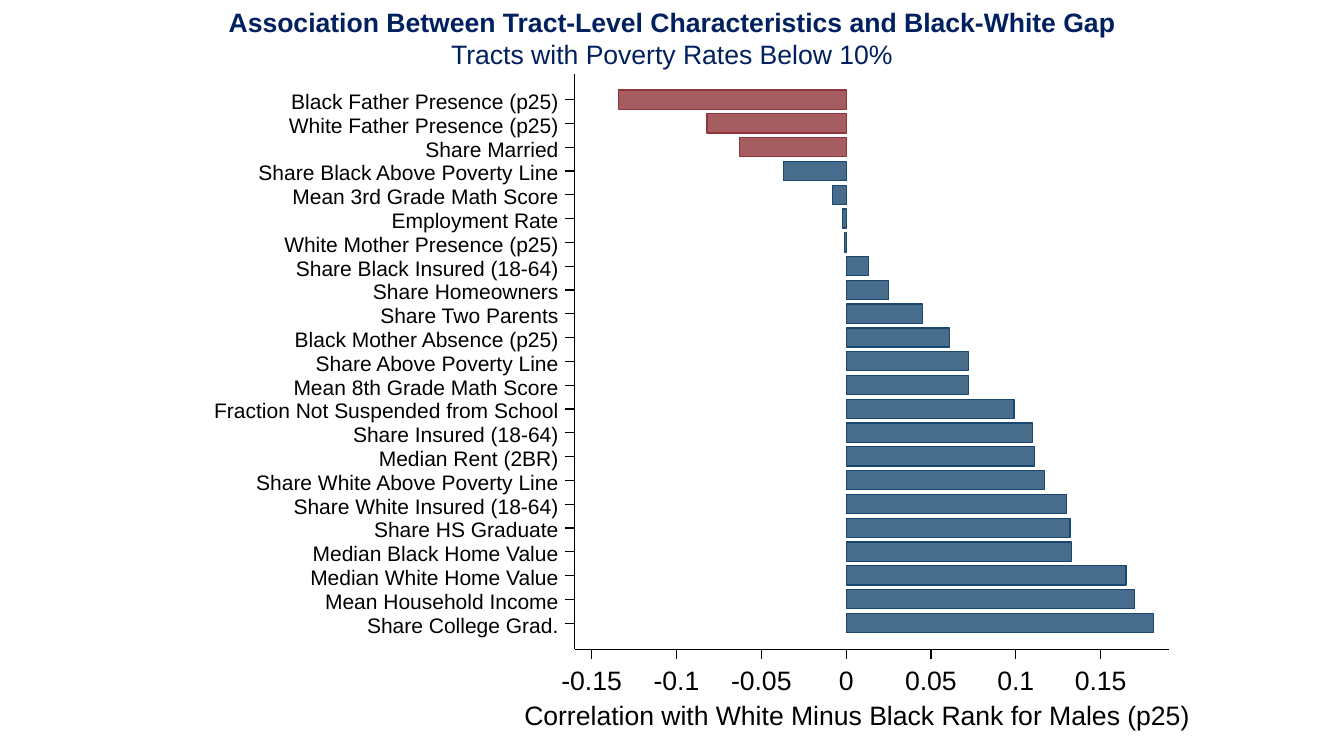
import pptx
import pptx.chart.data
import pptx.enum.chart
import pptx.enum.shapes
import pptx.enum.text
import pptx.oxml
import pptx.util
from pptx.dml.color import RGBColor
from pptx.oxml.ns import nsdecls
from pptx.util import Inches

COLORS = {
    "title": "002060",
    "text": "000000",
    "bar": "486C8C",
    "bar_edge": "1A476F",
    "family_bar": "A65D62",
    "family_bar_edge": "90353B",
}
FONT = "Arial"
LINE_WIDTH = pptx.util.Pt(0.88)

# Top to bottom
CORRELATIONS = [
    ("Black Father Presence (p25)", -0.134),
    ("White Father Presence (p25)", -0.082),
    ("Share Married", -0.063),
    ("Share Black Above Poverty Line", -0.037),
    ("Mean 3rd Grade Math Score", -0.008),
    ("Employment Rate", -0.002),
    ("White Mother Presence (p25)", -0.001),
    ("Share Black Insured (18-64)", 0.013),
    ("Share Homeowners", 0.025),
    ("Share Two Parents", 0.045),
    ("Black Mother Absence (p25)", 0.061),
    ("Share Above Poverty Line", 0.072),
    ("Mean 8th Grade Math Score", 0.072),
    ("Fraction Not Suspended from School", 0.099),
    ("Share Insured (18-64)", 0.11),
    ("Median Rent (2BR)", 0.111),
    ("Share White Above Poverty Line", 0.117),
    ("Share White Insured (18-64)", 0.13),
    ("Share HS Graduate", 0.132),
    ("Median Black Home Value", 0.133),
    ("Median White Home Value", 0.165),
    ("Mean Household Income", 0.17),
    ("Share College Grad.", 0.181),
]
FAMILY_BARS = 3
TICK_VALUES = [-0.15, -0.1, -0.05, 0, 0.05, 0.1, 0.15]

SCALE_MIN, SCALE_MAX = -0.16, 0.19
AXIS_LEFT, AXIS_RIGHT, AXIS_TOP, AXIS_BOTTOM = 5.7, 11.59, 0.73, 6.44
BARS_TOP, BARS_HEIGHT = 0.87, 5.43
ROW_HEIGHT = BARS_HEIGHT / len(CORRELATIONS)
TICK_LENGTH = 0.1


def color(name):
    return RGBColor.from_string(COLORS[name])


def style_font(font, size, name="text", bold=False):
    font.name = FONT
    font.size = pptx.util.Pt(size)
    font.bold = bold
    font.color.rgb = color(name)


def clear_margins(frame):
    frame.margin_left = frame.margin_right = 0
    frame.margin_top = frame.margin_bottom = 0


def add_title(page):
    title = page.shapes.title
    title.left, title.top = Inches(0), Inches(0.06)
    title.width, title.height = Inches(13.33), Inches(0.64)
    frame = title.text_frame
    clear_margins(frame)
    frame.vertical_anchor = pptx.enum.text.MSO_ANCHOR.TOP
    frame.auto_size = pptx.enum.text.MSO_AUTO_SIZE.NONE
    frame.text = (
        "Association Between Tract-Level Characteristics and Black-White Gap\n"
        "Tracts with Poverty Rates Below 10%"
    )
    for para, bold in zip(frame.paragraphs, (True, False)):
        para.alignment = pptx.enum.text.PP_ALIGN.CENTER
        para.line_spacing = 1.0
        para.space_before = pptx.util.Pt(0)
        style_font(para.font, 19, "title", bold)


def add_label(page, text, left, top, width, height, size, align):
    box = page.shapes.add_textbox(
        Inches(left), Inches(top), Inches(width), Inches(height)
    )
    frame = box.text_frame
    clear_margins(frame)
    frame.word_wrap = True
    para = frame.paragraphs[0]
    para.text = text
    para.alignment = align
    style_font(para.font, size)


def add_line(page, x1, y1, x2, y2):
    line = page.shapes.add_connector(
        pptx.enum.shapes.MSO_CONNECTOR.STRAIGHT,
        Inches(x1), Inches(y1), Inches(x2), Inches(y2),
    )
    line.line.color.rgb = color("text")
    line.line.width = LINE_WIDTH
    line._element.spPr.append(
        pptx.oxml.parse_xml(f"<a:effectLst {nsdecls('a')}/>")
    )


def color_bar(target, name):
    target.fill.solid()
    target.fill.fore_color.rgb = color(name)
    target.line.color.rgb = color(name + "_edge")
    target.line.width = LINE_WIDTH


def fill_frame_with_plot(chart):
    """Make the inner plot area cover the whole chart frame."""
    plot_area = chart._chartSpace.chart.plotArea
    for layout in plot_area.findall(pptx.oxml.ns.qn("c:layout")):
        plot_area.remove(layout)
    plot_area.insert(0, pptx.oxml.parse_xml(
        f"<c:layout {nsdecls('c')}><c:manualLayout>"
        '<c:layoutTarget val="inner"/>'
        '<c:xMode val="edge"/><c:yMode val="edge"/>'
        '<c:x val="0"/><c:y val="0"/><c:w val="1"/><c:h val="1"/>'
        "</c:manualLayout></c:layout>"
    ))


def add_bars(page):
    data = pptx.chart.data.CategoryChartData()
    bottom_up = CORRELATIONS[::-1]
    data.categories = [name for name, value in bottom_up]
    data.add_series("Correlation", [value for name, value in bottom_up])
    chart = page.shapes.add_chart(
        pptx.enum.chart.XL_CHART_TYPE.BAR_CLUSTERED,
        Inches(AXIS_LEFT), Inches(BARS_TOP),
        Inches(AXIS_RIGHT - AXIS_LEFT), Inches(BARS_HEIGHT), data,
    ).chart
    chart.has_legend = False
    chart.has_title = False
    style_font(chart.font, 15)
    fill_frame_with_plot(chart)
    chart.value_axis.minimum_scale = SCALE_MIN
    chart.value_axis.maximum_scale = SCALE_MAX
    chart.value_axis.has_major_gridlines = False
    chart.value_axis.visible = False
    chart.category_axis.visible = False
    plot = chart.plots[0]
    plot.gap_width = 24
    plot.vary_by_categories = False
    series = plot.series[0]
    series.invert_if_negative = False
    color_bar(series.format, "bar")
    for offset in range(1, FAMILY_BARS + 1):
        point = series.points[len(CORRELATIONS) - offset]
        color_bar(point.format, "family_bar")


def add_characteristic_axis(page):
    add_line(page, AXIS_LEFT, AXIS_BOTTOM, AXIS_LEFT, AXIS_TOP)
    for row, (name, value) in enumerate(CORRELATIONS):
        middle = BARS_TOP + (row + 0.5) * ROW_HEIGHT
        add_line(page, AXIS_LEFT, middle, AXIS_LEFT - TICK_LENGTH, middle)
        add_label(page, name, 1.54, middle - 0.11, 4, 0.28, 15,
                  pptx.enum.text.PP_ALIGN.RIGHT)


def add_correlation_axis(page):
    center = pptx.enum.text.PP_ALIGN.CENTER
    add_line(page, AXIS_LEFT, AXIS_BOTTOM, AXIS_RIGHT, AXIS_BOTTOM)
    inches_per_unit = (AXIS_RIGHT - AXIS_LEFT) / (SCALE_MAX - SCALE_MIN)
    for value in TICK_VALUES:
        x = AXIS_LEFT + (value - SCALE_MIN) * inches_per_unit
        add_line(page, x, AXIS_BOTTOM, x, AXIS_BOTTOM + TICK_LENGTH)
        add_label(page, str(value), x - 0.4, 6.59, 0.8, 0.35, 19, center)
    add_label(page, "Correlation with White Minus Black Rank for Males (p25)",
              5, 6.93, 7, 0.35, 19, center)


def main():
    deck = pptx.Presentation()
    deck.slide_width, deck.slide_height = Inches(13.33), Inches(7.5)
    page = deck.slides.add_slide(deck.slide_layouts[5])
    add_title(page)
    add_bars(page)
    add_characteristic_axis(page)
    add_correlation_axis(page)
    deck.save("out.pptx")


if __name__ == "__main__":
    main()
